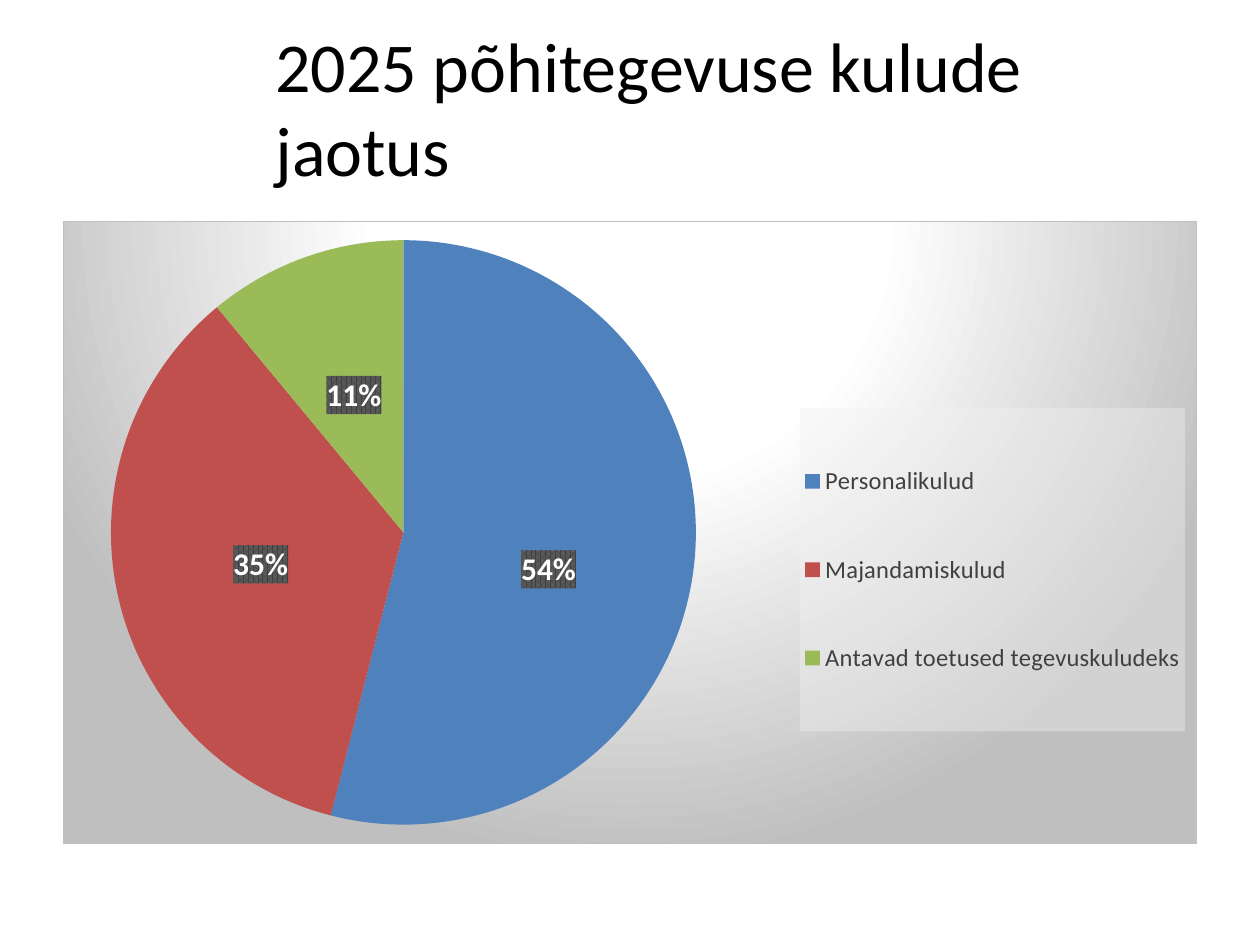
from copy import deepcopy

from pptx import Presentation
from pptx.chart.data import CategoryChartData
from pptx.dml.color import RGBColor
from pptx.enum.chart import XL_CHART_TYPE, XL_LABEL_POSITION, XL_LEGEND_POSITION
from pptx.enum.text import MSO_ANCHOR
from pptx.oxml import parse_xml
from pptx.oxml.ns import nsdecls, qn
from pptx.util import Pt

HUES = {
    "ink": "000000",
    "white": "FFFFFF",
    "grey": "BFBFBF",
    "pale": "F2F2F2",
    "slate": "404040",
    "ash": "595959",
    "blue": "4F81BD",
    "red": "C0504D",
    "green": "9BBB59",
}
COSTS = [
    ("Personalikulud", 54, "blue"),
    ("Majandamiskulud", 35, "red"),
    ("Antavad toetused tegevuskuludeks", 11, "green"),
]


def shade(hue, alpha=100):
    return f'<a:srgbClr val="{HUES[hue]}"><a:alpha val="{alpha * 1000}"/></a:srgbClr>'


def look(body):
    return parse_xml(f'<c:spPr {nsdecls("c", "a")}>{body}</c:spPr>')


def layout(left, top, width=None, height=None, inner=False):
    tags = '<c:layoutTarget val="inner"/>' if inner else ""
    if width:
        tags += '<c:xMode val="edge"/><c:yMode val="edge"/>'
    sides = zip("xywh", (left, top, width, height))
    tags += "".join(f'<c:{key} val="{val}"/>' for key, val in sides if val is not None)
    return parse_xml(
        f'<c:layout {nsdecls("c")}><c:manualLayout>{tags}</c:manualLayout></c:layout>'
    )


class Deck:
    """Holds the style and the current slide, and draws each kind of element."""

    def __init__(self, width, height, scale=914400 / 126, face="Calibri"):
        self.scale, self.face = scale, face
        self.file = Presentation()
        self.file.slide_width, self.file.slide_height = self.emu(width, height)
        self.slide = self.file.slides.add_slide(self.file.slide_layouts[6])

    def emu(self, *sizes):
        return [round(size * self.scale) for size in sizes]

    def style(self, font, size, hue, bold=False):
        font.name, font.size, font.bold = self.face, Pt(size), bold
        font.color.rgb = RGBColor.from_string(HUES[hue])

    def title(self, text, *box):
        frame = self.slide.shapes.add_textbox(*self.emu(*box)).text_frame
        frame.word_wrap = True
        frame.vertical_anchor = MSO_ANCHOR.MIDDLE
        frame.text = text
        self.style(frame.paragraphs[0].font, 40, "ink")

    def pie(self, rows, *box):
        data = CategoryChartData()
        data.categories = [name for name, _, _ in rows]
        data.add_series("Series 1", [val for _, val, _ in rows])
        chart = self.slide.shapes.add_chart(
            XL_CHART_TYPE.PIE, *self.emu(*box), data
        ).chart
        chart.has_title = False
        self.style(chart.font, 10, "ink")
        plot = chart.plots[0]
        plot.vary_by_categories = True
        for spot, (_, _, hue) in enumerate(rows):
            fill = plot.series[0].points[spot].format.fill
            fill.solid()
            fill.fore_color.rgb = RGBColor.from_string(HUES[hue])
        self.labels(plot.series[0].data_labels)
        self.legend(chart)
        self.ground(chart)

    def labels(self, tags):
        self.style(tags.font, 18, "white", True)
        tags.number_format, tags.number_format_is_linked = "0%", False
        tags.position = XL_LABEL_POSITION.CENTER
        tags.show_percentage, tags.show_value = True, False
        root = tags._element
        root.find(qn("c:numFmt")).addnext(look(
            f'<a:pattFill prst="pct75"><a:fgClr>{shade("slate")}</a:fgClr>'
            f'<a:bgClr>{shade("ash")}</a:bgClr></a:pattFill>'
        ))
        first = parse_xml(f'<c:dLbl {nsdecls("c")}><c:idx val="0"/></c:dLbl>')
        first.append(layout(0, 0.03))
        for part in root:
            if part.tag != qn("c:showLeaderLines"):
                first.append(deepcopy(part))
        root.insert(0, first)

    def legend(self, chart):
        chart.has_legend = True
        key = chart.legend
        key.position = XL_LEGEND_POSITION.RIGHT
        key.include_in_layout = False
        self.style(key.font, 14, "slate")
        root = key._element
        for old in root.findall(qn("c:layout")):
            root.remove(old)
        over = root.find(qn("c:overlay"))
        over.addprevious(layout(0.65, 0.3, 0.34, 0.52))
        over.addnext(look(f'<a:solidFill>{shade("pale", 39)}</a:solidFill>'))

    def ground(self, chart):
        body = chart.element.find(qn("c:chart"))
        area = body.find(qn("c:plotArea"))
        for old in area.findall(qn("c:layout")):
            area.remove(old)
        area.insert(0, layout(0.04, 0.03, 0.52, 0.94, inner=True))
        stops = "".join(
            f'<a:gs pos="{at * 1000}">{shade(hue)}</a:gs>'
            for at, hue in ((0, "white"), (39, "white"), (100, "grey"))
        )
        body.addnext(look(
            f'<a:gradFill><a:gsLst>{stops}</a:gsLst><a:path path="circle">'
            '<a:fillToRect l="50000" t="-80000" r="50000" b="180000"/></a:path></a:gradFill>'
            f'<a:ln w="{Pt(0.75)}"><a:solidFill>{shade("grey")}</a:solidFill></a:ln>'
        ))

    def save(self):
        self.file.save("out.pptx")


def main():
    deck = Deck(1260, 945)
    deck.title("2025 põhitegevuse kulude jaotus", 263, 38, 934, 137)
    deck.pie(COSTS, 63, 221, 1134, 623)
    deck.save()


if __name__ == "__main__":
    main()
